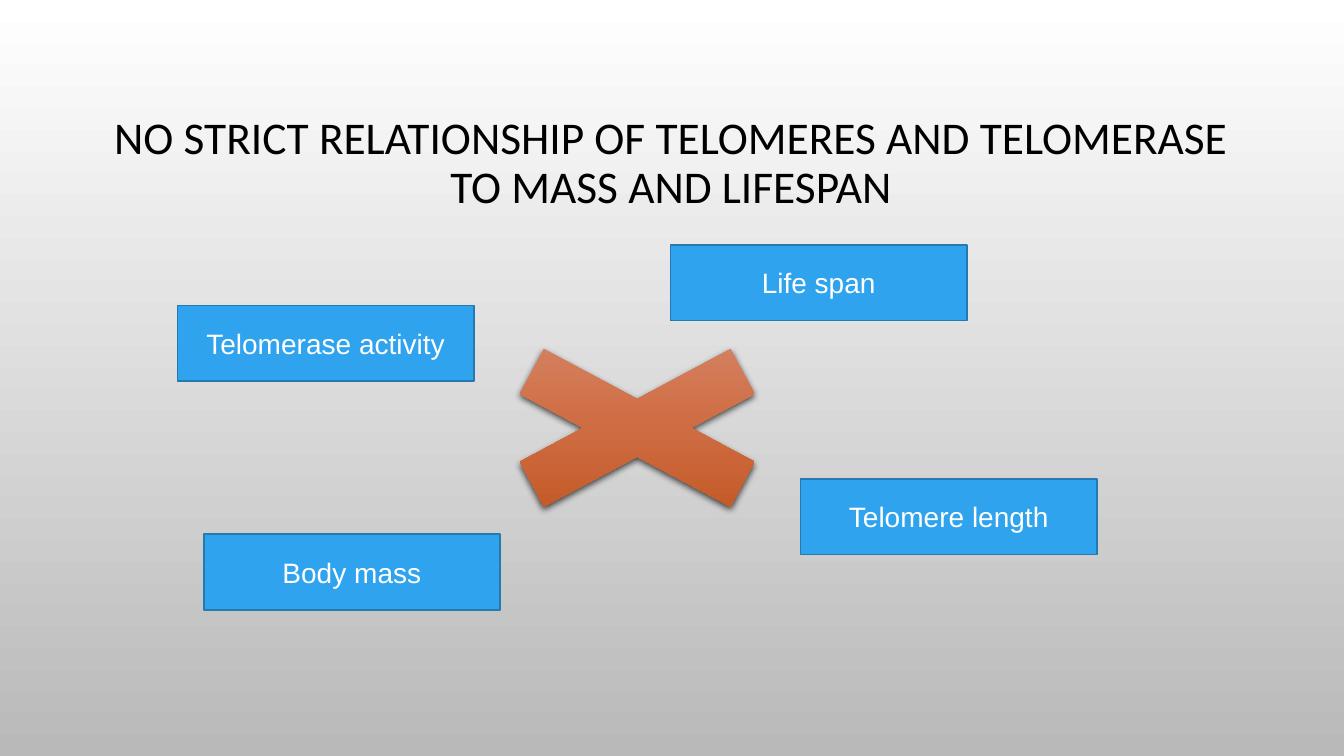
from copy import deepcopy

from lxml import etree
from pptx import Presentation
from pptx.dml.color import RGBColor
from pptx.enum import shapes, text
from pptx.oxml.ns import qn
from pptx.util import Inches, Pt

COLORS = {
    "title": "000000",
    "label": "FFFFFF",
    "box": "2FA3EE",
    "box_line": "2379B0",
    "shadow": "000000",
    "backdrop_top": "FFFFFF",
    "backdrop_bottom": "B9B9B9",
    "cross_top": "D68669",
    "cross_middle": "CF6C42",
    "cross_bottom": "C0541F",
}


def rgb(name):
    return RGBColor.from_string(COLORS[name])


def fill_downward(fill, top, bottom):
    fill.gradient()
    fill.gradient_angle = 270
    for stop, name, position in zip(fill.gradient_stops, (top, bottom), (0, 1)):
        stop.color.rgb = rgb(name)
        stop.position = position


prs = Presentation()
prs.slide_width, prs.slide_height = Inches(13.33), Inches(7.5)
slide = prs.slides.add_slide(prs.slide_layouts[6])
fill_downward(slide.background.fill, "backdrop_top", "backdrop_bottom")

# Title
title = slide.shapes.add_textbox(Inches(0.97), Inches(1.05), Inches(11.37), Inches(1.16))
title.text_frame.word_wrap = True
title.text_frame.vertical_anchor = text.MSO_ANCHOR.MIDDLE
heading = title.text_frame.paragraphs[0]
heading.text = "NO STRICT RELATIONSHIP OF TELOMERES AND TELOMERASE TO MASS AND LIFESPAN"
heading.alignment = text.PP_ALIGN.CENTER
heading.line_spacing = 0.9
heading.font.name, heading.font.size = "Calibri", Pt(32.4)
heading.font.color.rgb = rgb("title")

# Factors around the cross
factors = [
    ("Telomerase activity", 1.76, 3.03),
    ("Telomere length", 7.94, 4.75),
    ("Life span", 6.65, 2.43),
    ("Body mass", 2.02, 5.3),
]
for factor, left, top in factors:
    box = slide.shapes.add_shape(shapes.MSO_SHAPE.FLOWCHART_PROCESS,
                                 Inches(left), Inches(top), Inches(2.94), Inches(0.75))
    box.shadow.inherit = False
    box.fill.solid()
    box.fill.fore_color.rgb = rgb("box")
    box.line.color.rgb = rgb("box_line")
    box.line.width = Pt(1.25)
    box.text_frame.vertical_anchor = text.MSO_ANCHOR.MIDDLE
    label = box.text_frame.paragraphs[0]
    label.text = factor
    label.alignment = text.PP_ALIGN.CENTER
    label.font.name, label.font.size = "Arial", Pt(20)
    label.font.color.rgb = rgb("label")

# Cross: no relationship
cross = slide.shapes.add_shape(shapes.MSO_SHAPE.MATH_MULTIPLY,
                               Inches(4.31), Inches(3.17), Inches(4.02), Inches(2.15))
cross.line.fill.background()
fill_downward(cross.fill, "cross_top", "cross_bottom")

# Middle gradient stop
stops = cross.element.spPr.find(".//" + qn("a:gsLst"))
middle = deepcopy(stops[0])
middle.set("pos", "50000")
middle.find(qn("a:srgbClr")).set("val", COLORS["cross_middle"])
stops.insert(1, middle)

# Soft shadow below the cross
cross.shadow.inherit = False
effects = cross.element.spPr.find(qn("a:effectLst"))
shadow = etree.SubElement(effects, qn("a:outerShdw"), blurRad=str(Pt(5)), dist=str(Pt(2)),
                          dir="5400000", algn="ctr", rotWithShape="0")
shade = etree.SubElement(shadow, qn("a:srgbClr"), val=COLORS["shadow"])
etree.SubElement(shade, qn("a:alpha"), val="69000")

prs.save("out.pptx")
